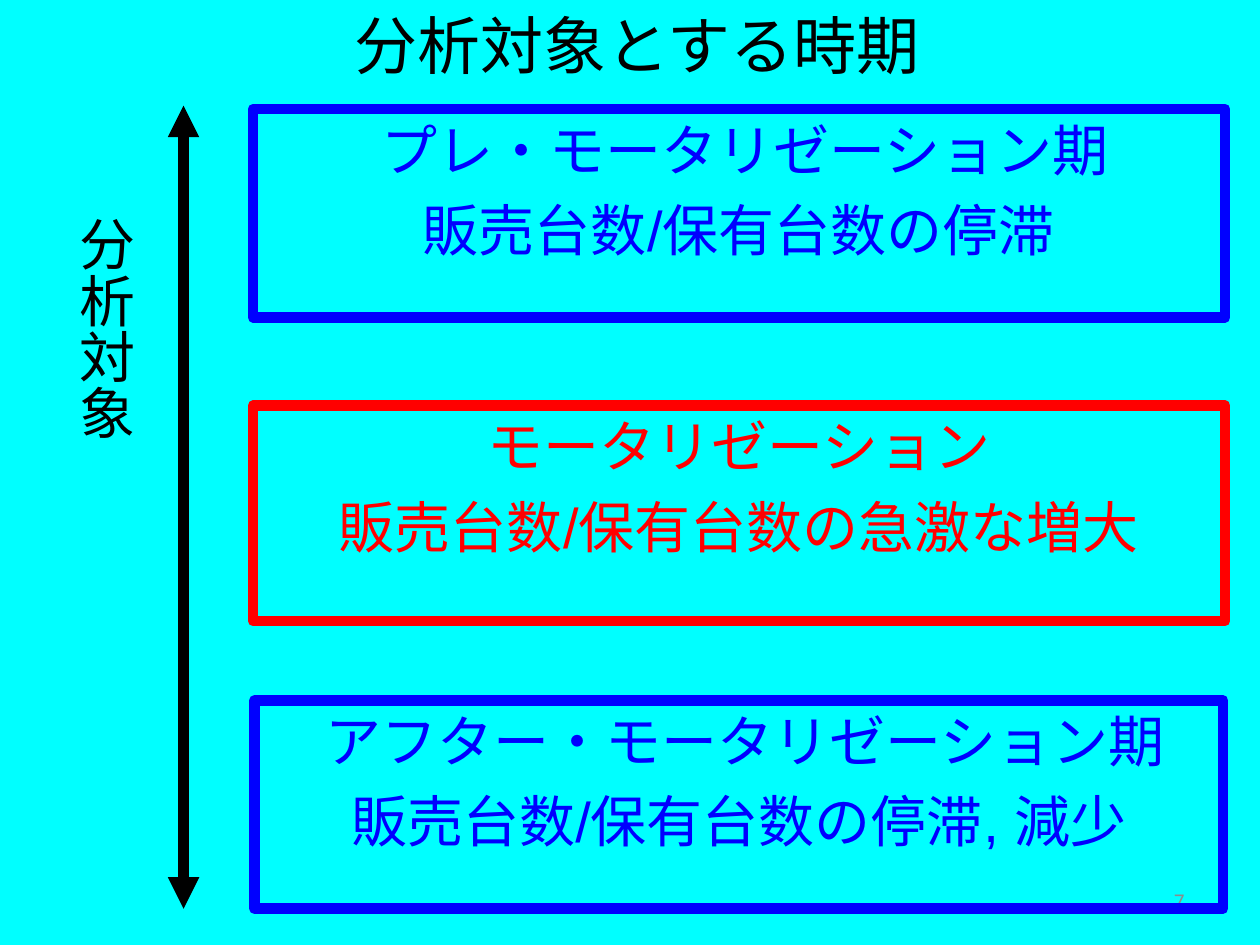
from dataclasses import dataclass

from lxml import etree
from pptx import Presentation
from pptx import util as u
from pptx.dml.color import RGBColor
from pptx.enum import shapes, text
from pptx.oxml.ns import qn

# Content: period name, description, colour key, (left, top, width, height) in cm
TITLE = " 分析対象とする時期"
PAGE_NUMBER = "7"
SCOPE_LABEL = "分析対象"
PERIODS = [
    (" プレ・モータリゼーション期", "販売台数/保有台数の停滞", "blue",
     (5.1, 2.2, 19.6, 4.2)),
    ("モータリゼーション", "販売台数/保有台数の急激な増大", "red",
     (5.1, 8.18, 19.6, 4.34)),
    (" アフター・モータリゼーション期", "販売台数/保有台数の停滞, 減少", "blue",
     (5.13, 14.12, 19.53, 4.2)),
]


@dataclass(frozen=True)
class Theme:
    background: str = "00FFFF"
    black: str = "000000"
    blue: str = "0000FF"
    red: str = "FF0000"
    grey: str = "8C8C8C"
    body_font: str = "Arial"
    label_font: str = "Calibri"
    title_size: float = 36
    body_size: float = 32
    number_size: float = 12
    line_width: float = 6
    paragraph_gap: float = 7.4


THEME = Theme()
ALIGN = text.PP_ALIGN
ANCHOR = text.MSO_ANCHOR


def rgb(name):
    return RGBColor.from_string(getattr(THEME, name))


def cm(*values):
    return [u.Cm(v) for v in values]


def write(sp, lines, font, size, color, align=ALIGN.CENTER, anchor=ANCHOR.TOP):
    tf = sp.text_frame
    tf.word_wrap = True
    tf.auto_size = text.MSO_AUTO_SIZE.NONE
    tf.vertical_anchor = anchor
    for i, line in enumerate(lines):
        p = tf.paragraphs[0] if i == 0 else tf.add_paragraph()
        p.text = line
        p.alignment = align
        p.space_before = u.Pt(THEME.paragraph_gap if i else 0)
        p.font.name = font
        p.font.size = u.Pt(size)
        p.font.color.rgb = rgb(color)


def add_period(s, name, description, color, box):
    sp = s.shapes.add_shape(shapes.MSO_SHAPE.RECTANGLE, *cm(*box))
    sp.shadow.inherit = False
    sp.fill.background()
    sp.line.color.rgb = rgb(color)
    sp.line.width = u.Pt(THEME.line_width)
    write(sp, [name, description], THEME.body_font, THEME.body_size, color)


def add_double_arrow(s, x, top, bottom):
    line = s.shapes.add_connector(shapes.MSO_CONNECTOR.STRAIGHT,
                                  *cm(x, top, x, bottom))
    line.line.color.rgb = rgb("black")
    line.line.width = u.Pt(THEME.line_width)
    ln = line.line._get_or_add_ln()
    for end in ("a:headEnd", "a:tailEnd"):
        etree.SubElement(ln, qn(end), type="triangle")
    etree.SubElement(line._element.spPr, qn("a:effectLst"))


def main():
    prs = Presentation()
    prs.slide_width, prs.slide_height = cm(25.4, 19.05)
    s = prs.slides.add_slide(prs.slide_layouts[5])
    s.background.fill.solid()
    s.background.fill.fore_color.rgb = rgb("background")

    # Title
    title = s.shapes.title
    title.left, title.top, title.width, title.height = cm(0, 0, 25.4, 2.13)
    write(title, [TITLE], THEME.body_font, THEME.title_size, "black")

    # Page number
    number = s.shapes.add_textbox(*cm(18.2, 17.65, 5.93, 1.01))
    write(number, [PAGE_NUMBER], THEME.label_font, THEME.number_size, "grey",
          ALIGN.RIGHT, ANCHOR.MIDDLE)

    # Period boxes
    for period in PERIODS:
        add_period(s, *period)

    # Scope arrow and its vertical label
    add_double_arrow(s, 3.7, 2.13, 18.32)
    label = s.shapes.add_textbox(*cm(1.04, 4.12, 1.88, 11.6))
    write(label, [SCOPE_LABEL], THEME.label_font, THEME.body_size, "black",
          ALIGN.LEFT)
    label.text_frame._txBody.bodyPr.set("vert", "eaVert")

    prs.save("out.pptx")


if __name__ == "__main__":
    main()
